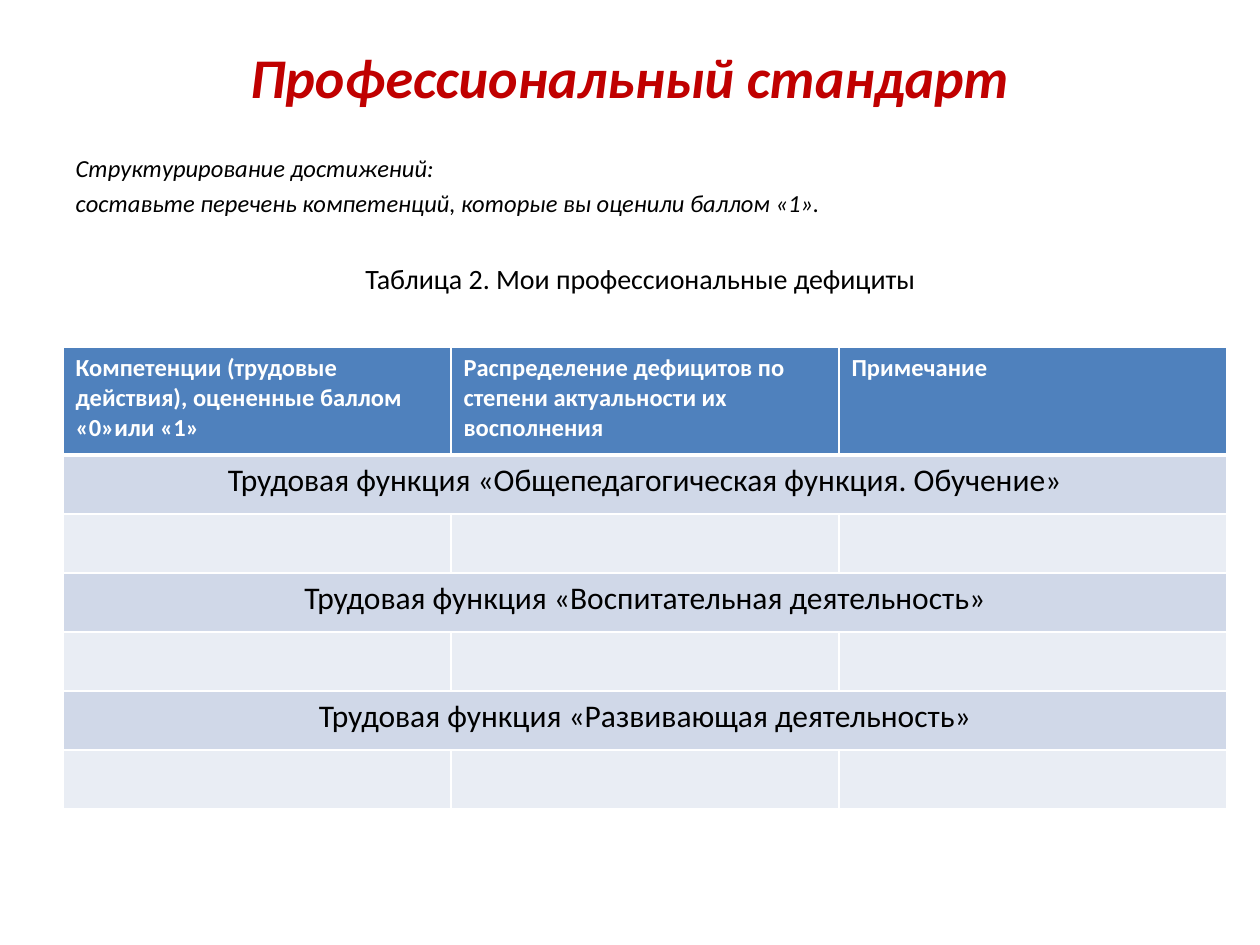
import dataclasses

import pptx
import pptx.dml.color
import pptx.enum.text
import pptx.oxml
import pptx.oxml.ns
import pptx.util

ALIGN = pptx.enum.text.PP_ALIGN
EMU_PER_PX = 914400 / 126


def px(length):
    return pptx.util.Emu(round(length * EMU_PER_PX))


def color(value):
    return pptx.dml.color.RGBColor.from_string(value)


@dataclasses.dataclass(frozen=True)
class Theme:
    font: str = "Calibri"
    accent: str = "C00000"
    ink: str = "000000"
    white: str = "FFFFFF"
    header: str = "4F81BD"
    band: str = "D0D8E8"
    plain: str = "E9EDF4"
    title_size: int = 32
    caption_size: int = 16
    small_size: int = 14
    function_size: int = 18


class SlideBuilder:
    def __init__(self, slide, theme):
        self.slide = slide
        self.theme = theme

    def place(self, shape, left, top, width, height):
        shape.left, shape.top = px(left), px(top)
        shape.width, shape.height = px(width), px(height)

    def format(self, para, size, ink, bold=False, italic=False, align=ALIGN.LEFT):
        para.alignment = align
        for span in para.runs:
            font = span.font
            font.name, font.size = self.theme.font, pptx.util.Pt(size)
            font.bold, font.italic = bold, italic
            font.color.rgb = color(ink)

    def title(self, text, *bounds):
        box = self.slide.shapes.title
        self.place(box, *bounds)
        box.text_frame.text = text
        box.text_frame.vertical_anchor = pptx.enum.text.MSO_ANCHOR.MIDDLE
        self.format(box.text_frame.paragraphs[0], self.theme.title_size,
                    self.theme.accent, bold=True, italic=True, align=ALIGN.CENTER)

    def body(self, lines, caption, *bounds):
        box = self.slide.placeholders[1]
        self.place(box, *bounds)
        frame = box.text_frame
        frame.auto_size = pptx.enum.text.MSO_AUTO_SIZE.NONE
        frame.text = "\n".join([*lines, caption])
        for para in frame.paragraphs:
            para.space_before = pptx.util.Pt(3)
            self.format(para, self.theme.small_size, self.theme.ink, italic=True)
            properties = para._p.get_or_add_pPr()
            properties.set("marL", "0")
            properties.set("indent", "0")
            pptx.oxml.ns.qn("a:buNone")
            properties.append(pptx.oxml.parse_xml(
                f'<a:buNone {pptx.oxml.ns.nsdecls("a")}/>'))
        # The caption stands apart from the instructions
        para.space_before = pptx.util.Pt(25)
        self.format(para, self.theme.caption_size, self.theme.ink, align=ALIGN.CENTER)

    def cell(self, cell, fill, top=1, bottom=1):
        properties = cell._tc.get_or_add_tcPr()
        for side, width in zip("LRTB", (1, 1, top, bottom)):
            properties.append(pptx.oxml.parse_xml(
                f'<a:ln{side} {pptx.oxml.ns.nsdecls("a")} w="{pptx.util.Pt(width)}">'
                f'<a:solidFill><a:srgbClr val="{self.theme.white}"/></a:solidFill>'
                f'</a:ln{side}>'))
        cell.fill.solid()
        cell.fill.fore_color.rgb = color(fill)

    def table(self, headers, functions, left, top, column, header_height, row_height):
        theme = self.theme
        count = 1 + 2 * len(functions)
        height = header_height + row_height * (count - 1)
        table = self.slide.shapes.add_table(
            count, len(headers), px(left), px(top),
            px(column * len(headers)), px(height)).table
        for index, row in enumerate(table.rows):
            row.height = px(row_height if index else header_height)
            fill = theme.header if index == 0 else theme.band if index % 2 else theme.plain
            for cell in row.cells:
                self.cell(cell, fill, top=3 if index == 1 else 1,
                          bottom=1 if index else 3)
        # Column headings
        for cell, text in zip(table.rows[0].cells, headers):
            cell.text_frame.text = text
            self.format(cell.text_frame.paragraphs[0], theme.small_size,
                        theme.white, bold=True)
        # Each function spans the row above its blank answer row
        for index, text in enumerate(functions):
            cell = table.cell(2 * index + 1, 0)
            cell.merge(table.cell(2 * index + 1, len(headers) - 1))
            cell.text_frame.text = text
            self.format(cell.text_frame.paragraphs[0], theme.function_size,
                        theme.ink, align=ALIGN.CENTER)


def main():
    deck = pptx.Presentation()
    deck.slide_width, deck.slide_height = px(1260), px(945)
    page = SlideBuilder(deck.slides.add_slide(deck.slide_layouts[1]), Theme())

    # Title and instructions
    page.title("Профессиональный стандарт", 63, 22, 1134, 109)
    page.body(
        ["Структурирование достижений:",
         "составьте перечень компетенций, которые вы оценили баллом «1»."],
        "Таблица 2. Мои профессиональные дефициты", 63, 147, 1155, 725)

    # Table of deficits
    page.table(
        ["Компетенции (трудовые действия), оцененные баллом «0»или «1»",
         "Распределение дефицитов по степени актуальности их восполнения",
         "Примечание"],
        ["Трудовая функция «Общепедагогическая функция. Обучение»",
         "Трудовая функция «Воспитательная деятельность»",
         "Трудовая функция «Развивающая деятельность»"],
        left=63, top=347, column=388, header_height=108, row_height=59)

    deck.save("out.pptx")


if __name__ == "__main__":
    main()
